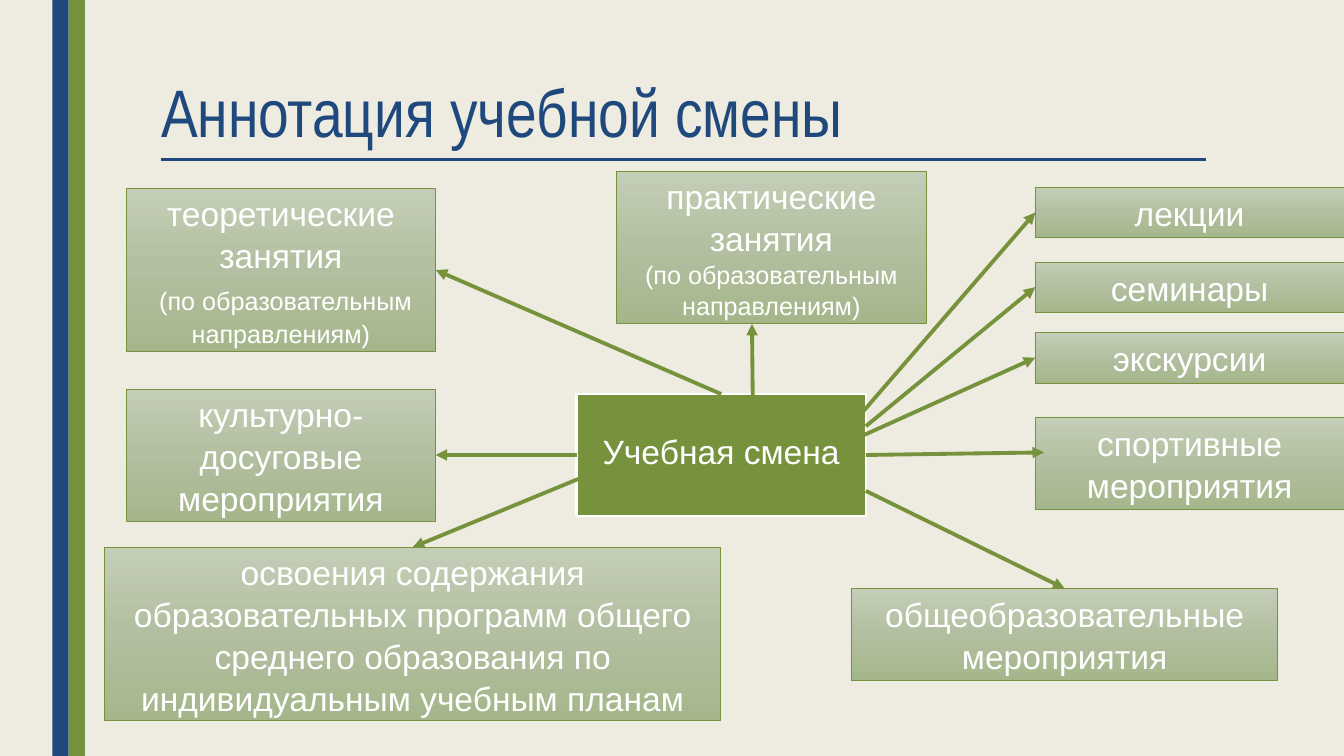
import copy

import pptx
import pptx.dml.color
import pptx.enum.shapes
import pptx.enum.text
import pptx.oxml
import pptx.oxml.ns
import pptx.util

Cm = pptx.util.Cm
Pt = pptx.util.Pt
RECT = pptx.enum.shapes.MSO_SHAPE.RECTANGLE
STRAIGHT = pptx.enum.shapes.MSO_CONNECTOR.STRAIGHT
ALIGN = pptx.enum.text.PP_ALIGN
MIDDLE = pptx.enum.text.MSO_ANCHOR.MIDDLE

PAPER, BLUE, GREEN, WHITE = "EEECE1", "1F497D", "76923C", "FFFFFF"
SHADES = ((0, "C4CEB7"), (0.5, "B2BFA0"), (1, "A5B68B"))
TOP, LEFT, BOTTOM, RIGHT = range(4)
LARGE = dict(size=Pt(24), name="Arial")
SMALL = dict(size=Pt(18), name="Arial")
FIELDS = "(по образовательным направлениям)"

HUB = (11.89, 5.61, 7.29, 3.07)
BOXES = {
    "theory": ((0.54, 0.43, 7.8, 4.11),
               [[("теоретические", LARGE)], [("занятия", LARGE)],
                [(" ", LARGE), (FIELDS, SMALL)]]),
    "practice": ((12.9, 0, 7.8, 3.84),
                 [[("практические занятия", LARGE)], [(FIELDS, SMALL)]]),
    "lectures": ((23.45, 0.4, 7.78, 1.27), [[("лекции", LARGE)]]),
    "seminars": ((23.45, 2.28, 7.78, 1.27), [[("семинары", LARGE)]]),
    "excursions": ((23.45, 4.06, 7.78, 1.27), [[("экскурсии", LARGE)]]),
    "sport": ((23.45, 6.2, 7.78, 2.31), [[("спортивные мероприятия", LARGE)]]),
    "culture": ((0.54, 5.48, 7.8, 3.33),
                [[("культурно-досуговые", LARGE)], [("мероприятия", LARGE)]]),
    "plans": ((0, 9.47, 15.52, 4.37),
              [[("освоения содержания образовательных программ общего среднего "
                 "образования по индивидуальным учебным планам", LARGE)]]),
    "general": ((18.82, 10.51, 10.74, 2.31),
                [[("общеобразовательные мероприятия", LARGE)]]),
}
ARROWS = (
    (TOP, "theory", RIGHT),
    (RIGHT, "sport", (23.67, 7.08)),
    (LEFT, "culture", RIGHT),
    ((19.18, 6.42), "seminars", LEFT),
    ((19.05, 6.12), "lectures", LEFT),
    ((19.18, 8.05), "general", TOP),
    ((19.05, 6.68), "excursions", LEFT),
    ((12.32, 7.59), "plans", TOP),
    ((16.33, 5.69), "practice", (16.31, 3.84)),
)


def rgb(value):
    """Return the colour for a hex string."""
    return pptx.dml.color.RGBColor.from_string(value)


def set_format(target, values):
    """Set each attribute in a dict of format values."""
    for name, value in values.items():
        setattr(target, name, value)


def add_rect(s, x, y, w, h, fill=None, line=None, width=0.5):
    """Add a rectangle, shaded when no plain fill is given."""
    sp = s.shapes.add_shape(RECT, Cm(x), Cm(y), Cm(w), Cm(h))
    sp.shadow.inherit = False
    if fill:
        sp.fill.solid()
        sp.fill.fore_color.rgb = rgb(fill)
    else:
        shade(sp.fill)
    if line:
        sp.line.color.rgb = rgb(line)
        sp.line.width = Pt(width)
    else:
        sp.line.fill.background()
    return sp


def shade(fill):
    """Give a fill the vertical three-stop gradient."""
    fill.gradient()
    fill.gradient_angle = 270
    first = fill.gradient_stops[0]._gs
    first.addnext(copy.deepcopy(first))
    for stop, (position, color) in zip(fill.gradient_stops, SHADES):
        stop.position = position
        stop.color.rgb = rgb(color)


def add_line(s, start, end, color, width, arrow=False):
    """Add a straight line between two points, with an optional arrowhead."""
    cx = s.shapes.add_connector(STRAIGHT, *(Cm(v) for v in (*start, *end)))
    cx.line.color.rgb = rgb(color)
    cx.line.width = Pt(width)
    if arrow:
        ln = cx.line._get_or_add_ln()
        pptx.oxml.ns.qn("a:tailEnd")
        ln.append(ln.makeelement(pptx.oxml.ns.qn("a:tailEnd"), {"type": "triangle"}))
    props = cx._element.spPr
    props.append(props.makeelement(pptx.oxml.ns.qn("a:effectLst"), {}))
    return cx


def fill_text(sp, paragraphs):
    """Write centred white paragraphs made of (text, font) runs."""
    tf = sp.text_frame
    set_format(tf, dict(word_wrap=True, vertical_anchor=MIDDLE))
    for i, runs in enumerate(paragraphs):
        p = tf.add_paragraph() if i else tf.paragraphs[0]
        set_format(p, dict(alignment=ALIGN.CENTER, line_spacing=1.04))
        for text, font in runs:
            r = p.add_run()
            r.text = text
            set_format(r.font, font)
            r.font.color.rgb = rgb(WHITE)


def add_stripes(s, x, y, w, h):
    """Split a vertical band into a blue and a green stripe."""
    for i, color in enumerate((BLUE, GREEN)):
        add_rect(s, x + i * w / 2, y, w / 2, h, color)


def add_title(s, x, y, w, h):
    """Place the title and the rule under it."""
    sp = s.shapes.title
    set_format(sp, dict(left=Cm(x), top=Cm(y), width=Cm(w), height=Cm(h)))
    tf = sp.text_frame
    tf.text = "Аннотация учебной смены"
    set_format(tf, dict(word_wrap=True, vertical_anchor=MIDDLE,
                        auto_size=pptx.enum.text.MSO_AUTO_SIZE.NONE))
    p = tf.paragraphs[0]
    set_format(p, dict(alignment=ALIGN.LEFT, line_spacing=0.89))
    r = p.runs[0]
    set_format(r.font, dict(size=Pt(48), name="Arial Narrow"))
    r.font.color.rgb = rgb(BLUE)
    rule = y + h + 0.1
    add_line(s, (x + 0.25, rule), (x + w - 0.1, rule), BLUE, 2.25)


def add_diagram(s, x, y):
    """Place the hub, the boxes around it and the arrows to them."""
    def at(point):
        return x + point[0], y + point[1]

    hub = add_rect(s, *at(HUB), *HUB[2:], GREEN, WHITE, 1.5)
    fill_text(hub, [[("Учебная смена", LARGE)]])
    hub.text_frame.margin_bottom = Cm(0.35)
    boxes = {}
    for name, (place, paragraphs) in BOXES.items():
        boxes[name] = add_rect(s, *at(place), *place[2:], line=GREEN)
        fill_text(boxes[name], paragraphs)
    for start, name, end in ARROWS:
        points = [(x, y) if isinstance(e, int) else at(e) for e in (start, end)]
        cx = add_line(s, *points, GREEN, 2.75, arrow=True)
        if isinstance(start, int):
            cx.begin_connect(hub, start)
        if isinstance(end, int):
            cx.end_connect(boxes[name], end)


def main():
    """Build the slide and save it."""
    prs = pptx.Presentation()
    set_format(prs, dict(slide_width=Cm(33.87), slide_height=Cm(19.05)))
    s = prs.slides.add_slide(prs.slide_layouts[5])
    s.background.fill.solid()
    s.background.fill.fore_color.rgb = rgb(PAPER)
    add_stripes(s, 1.32, 0, 0.82, 19.05)
    add_title(s, 3.81, 1.91, 26.67, 2)
    add_diagram(s, 2.64, 4.32)
    prs.save("out.pptx")


if __name__ == "__main__":
    main()
